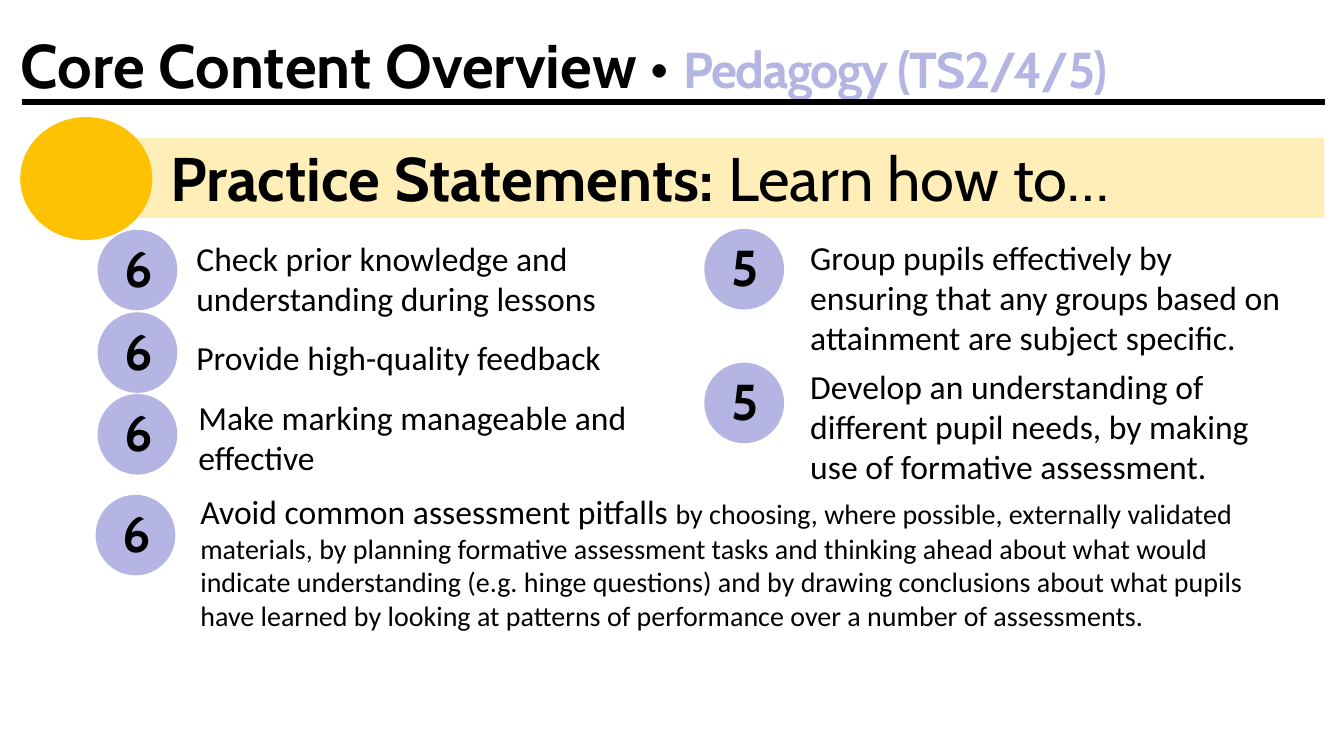
import pptx
import pptx.dml.color
import pptx.enum.shapes
import pptx.enum.text
import pptx.util
from lxml import etree

Cm, Pt = pptx.util.Cm, pptx.util.Pt
KIND = pptx.enum.shapes.MSO_SHAPE
INK, LILAC, GOLD, CREAM = "000000", "B4B5E2", "FFC203", "FFEEB7"
HEAD, BODY = "Cabin", "Calibri"

# Each paragraph is a list of runs: (text, format)
TITLE = [[("Core Content Overview • ", {}),
          ("Pedagogy (TS2/4/5)", {"size": 36, "color": LILAC, "gap": -100})]]
BANNER = [[("Practice Statements: ", {}), ("Learn how to…", {"bold": False})]]

# Badge digit, badge left and top, text left, top, width and height (cm), text
POINTS = [
    ("6", (2.46, 5.79), (4.7, 5.87, 12.62, 2.31),
     [[("Check prior knowledge and understanding during lessons", {})]]),
    ("6", (2.46, 7.87), (4.7, 8.36, 12.62, 1.27),
     [[("Provide high-quality feedback", {})]]),
    ("6", (2.46, 9.93), (4.75, 9.88, 12.62, 2.31),
     [[("Make marking manageable and effective", {})]]),
    ("5", (17.75, 5.77), (20.17, 5.84, 12.62, 3.33),
     [[("Group pupils effectively by", {})],
      [("ensuring that any groups based on attainment are subject specific.", {})]]),
    ("5", (17.75, 9.14), (20.17, 9.09, 12.62, 3.33),
     [[("Develop an understanding of different pupil needs, by making use of "
        "formative assessment.", {})]]),
    ("6", (2.41, 12.47), (4.8, 12.24, 27.99, 3.84),
     [[("Avoid common assessment pitfalls ", {}),
       ("by choosing, where possible, externally validated materials, by "
        "planning formative assessment tasks and thinking ahead about what "
        "would indicate understanding (e.g. hinge questions) and by drawing "
        "conclusions about what pupils have learned by looking at patterns of "
        "performance over a number of assessments.", {"size": 20})]]),
]


def paint(fill, color):
    fill.solid()
    fill.fore_color.rgb = pptx.dml.color.RGBColor.from_string(color)


def shape(host, kind, box, color):
    item = host.add_shape(kind, *map(Cm, box))
    item.shadow.inherit = False
    paint(item.fill, color)
    item.line.fill.background()


def style(run, size, font, color=INK, bold=False, gap=None, edge=None):
    """Format a run; gap is letter spacing in 1/100 pt, edge an outline in pt."""
    face = run.font
    face.size, face.name, face.bold = Pt(size), font, bold
    paint(face.fill, color)
    props = run._r.get_or_add_rPr()
    if gap:
        props.set("spc", str(gap))
    if edge:
        space = pptx.oxml.ns.nsdecls("a")
        props.insert(0, pptx.oxml.parse_xml(
            f'<a:ln {space} w="{Pt(edge)}"><a:solidFill>'
            f'<a:srgbClr val="{color}"/></a:solidFill></a:ln>'))


def text(host, box, paras, wrap=True, **base):
    frame = host.add_textbox(*map(Cm, box)).text_frame
    frame.word_wrap = wrap
    frame.auto_size = pptx.enum.text.MSO_AUTO_SIZE.SHAPE_TO_FIT_TEXT
    for i, runs in enumerate(paras):
        para = frame.add_paragraph() if i else frame.paragraphs[0]
        for words, extra in runs:
            run = para.add_run()
            run.text = words
            style(run, **{**base, **extra})


def rule(host, left, right, top, width):
    line = host.add_connector(pptx.enum.shapes.MSO_CONNECTOR.STRAIGHT,
                              Cm(left), Cm(top), Cm(right), Cm(top))
    paint(line.line.fill, INK)
    line.line.width = Pt(width)
    etree.SubElement(line._element.spPr, pptx.oxml.ns.qn("a:effectLst"))


def badge(host, left, top, digit):
    group = host.add_group_shape().shapes
    shape(group, KIND.OVAL, (left, top, 2.01, 2.03), LILAC)
    text(group, (left + 0.44, top + 0.06, 1.19, 1.8), [[(digit, {})]],
         wrap=False, size=36, font=HEAD, bold=True, edge=0.75)


def main():
    deck = pptx.Presentation()
    deck.slide_width, deck.slide_height = Cm(33.87), Cm(19.05)
    host = deck.slides.add_slide(deck.slide_layouts[6]).shapes
    shape(host, KIND.RECTANGLE, (3.2, 3.48, 30.18, 2.01), CREAM)
    shape(host, KIND.OVAL, (0.51, 2.95, 3.33, 3.1), GOLD)
    text(host, (0.28, 0.56, 33.58, 2.13), TITLE, size=44, font=HEAD, bold=True)
    rule(host, 0.56, 33.38, 2.57, 4.5)
    text(host, (4.04, 3.4, 29.29, 2.13), BANNER, size=44, font=HEAD, bold=True)
    for digit, spot, box, paras in POINTS:
        text(host, box, paras, size=24, font=BODY)
        badge(host, *spot, digit)
    deck.save("out.pptx")


if __name__ == "__main__":
    main()
